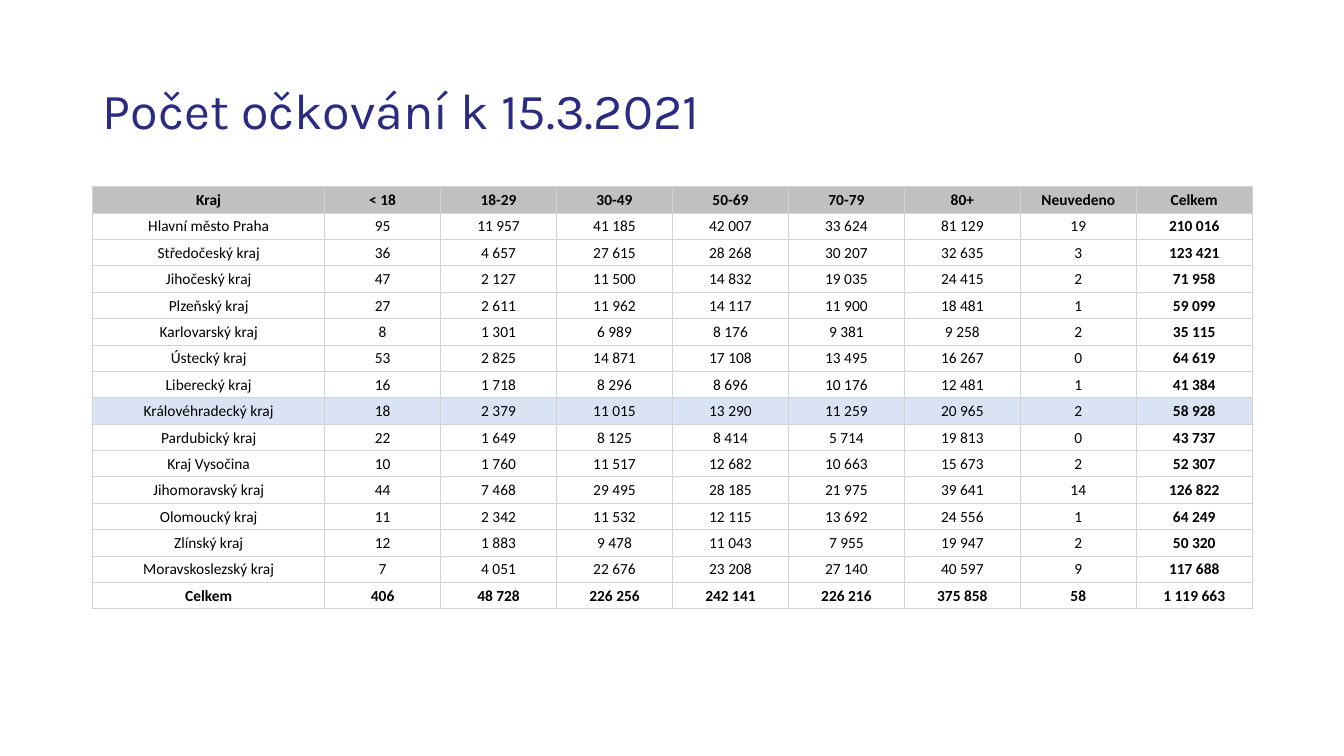
"""Build a slide with a table of vaccinations by region and age group."""
import dataclasses

import pptx
import pptx.dml.color
import pptx.enum.text
import pptx.oxml
import pptx.oxml.ns
import pptx.util

TITLE = "Počet očkování k 15.3.2021"
HEADINGS = ["Kraj", "< 18", "18-29", "30-49", "50-69", "70-79", "80+", "Neuvedeno", "Celkem"]
REGIONS = [
    ("Hlavní město Praha", 95, 11957, 41185, 42007, 33624, 81129, 19, 210016),
    ("Středočeský kraj", 36, 4657, 27615, 28268, 30207, 32635, 3, 123421),
    ("Jihočeský kraj", 47, 2127, 11500, 14832, 19035, 24415, 2, 71958),
    ("Plzeňský kraj", 27, 2611, 11962, 14117, 11900, 18481, 1, 59099),
    ("Karlovarský kraj", 8, 1301, 6989, 8176, 9381, 9258, 2, 35115),
    ("Ústecký kraj", 53, 2825, 14871, 17108, 13495, 16267, 0, 64619),
    ("Liberecký kraj", 16, 1718, 8296, 8696, 10176, 12481, 1, 41384),
    ("Královéhradecký kraj", 18, 2379, 11015, 13290, 11259, 20965, 2, 58928),
    ("Pardubický kraj", 22, 1649, 8125, 8414, 5714, 19813, 0, 43737),
    ("Kraj Vysočina", 10, 1760, 11517, 12682, 10663, 15673, 2, 52307),
    ("Jihomoravský kraj", 44, 7468, 29495, 28185, 21975, 39641, 14, 126822),
    ("Olomoucký kraj", 11, 2342, 11532, 12115, 13692, 24556, 1, 64249),
    ("Zlínský kraj", 12, 1883, 9478, 11043, 7955, 19947, 2, 50320),
    ("Moravskoslezský kraj", 7, 4051, 22676, 23208, 27140, 40597, 9, 117688),
]
TOTALS = ("Celkem", 406, 48728, 226256, 242141, 226216, 375858, 58, 1119663)
HIGHLIGHTED = "Královéhradecký kraj"

PX = 9144
PAGE_SIZE = (1333, 750)
TITLE_BOX = (92, 40, 1150, 145)
TABLE_BOX = (92, 185, 1150, 419)


@dataclasses.dataclass(frozen=True)
class Theme:
    """Colours, fonts and type sizes."""
    title: str = "2B2B82"
    text: str = "000000"
    header: str = "C0C0C0"
    highlight: str = "DAE3F3"
    border: str = "D3D3D3"
    title_font: str = "Karla"
    body_font: str = "Calibri"
    title_size: int = 36
    body_size: int = 11
    border_width: float = 0.5


THEME = Theme()


def px(length):
    """Turn px into EMU."""
    return pptx.util.Emu(round(length * PX))


def style_font(font, name, size, colour, bold=False):
    """Set the look of a run."""
    font.name = name
    font.size = pptx.util.Pt(size)
    font.bold = bold
    font.color.rgb = pptx.dml.color.RGBColor.from_string(colour)


def add_borders(cell):
    """Draw a thin line on every side of a cell."""
    properties = cell._tc.get_or_add_tcPr()
    width = pptx.util.Pt(THEME.border_width)
    for side in ("lnL", "lnR", "lnT", "lnB"):
        properties.append(pptx.oxml.parse_xml(
            f'<a:{side} {pptx.oxml.ns.nsdecls("a")} w="{width}"><a:solidFill>'
            f'<a:srgbClr val="{THEME.border}"/></a:solidFill></a:{side}>'))


def fill_cell(cell, value, bold, colour):
    """Write and format one cell."""
    add_borders(cell)
    if colour:
        cell.fill.solid()
        cell.fill.fore_color.rgb = pptx.dml.color.RGBColor.from_string(colour)
    else:
        cell.fill.background()
    cell.margin_left = cell.margin_right = cell.margin_top = px(1)
    cell.margin_bottom = 0
    cell.vertical_anchor = pptx.enum.text.MSO_ANCHOR.MIDDLE
    para = cell.text_frame.paragraphs[0]
    para.text = f"{value:,}".replace(",", " ") if isinstance(value, int) else value
    para.alignment = pptx.enum.text.PP_ALIGN.CENTER
    style_font(para.runs[0].font, THEME.body_font, THEME.body_size, THEME.text, bold)


def add_title(page):
    """Place and format the title placeholder."""
    box = page.shapes.title
    box.left, box.top, box.width, box.height = map(px, TITLE_BOX)
    box.text_frame.text = TITLE
    box.text_frame.vertical_anchor = pptx.enum.text.MSO_ANCHOR.MIDDLE
    para = box.text_frame.paragraphs[0]
    para.alignment = pptx.enum.text.PP_ALIGN.LEFT
    para.line_spacing = 0.9
    style_font(para.runs[0].font, THEME.title_font, THEME.title_size, THEME.title)


def add_region_table(page):
    """Add the table; the first column is twice as wide as the others."""
    rows = [HEADINGS, *REGIONS, TOTALS]
    table = page.shapes.add_table(len(rows), len(HEADINGS), *map(px, TABLE_BOX)).table
    table.first_row = table.horz_banding = False
    unit = TABLE_BOX[2] / (len(HEADINGS) + 1)
    for index, column in enumerate(table.columns):
        column.width = px(unit * (2 if index == 0 else 1))
    for row in table.rows:
        row.height = px(TABLE_BOX[3] / len(rows))
    fills = {HEADINGS[0]: THEME.header, HIGHLIGHTED: THEME.highlight}
    for row_index, values in enumerate(rows):
        for column_index, value in enumerate(values):
            bold = row_index in (0, len(rows) - 1) or column_index == len(HEADINGS) - 1
            fill_cell(table.cell(row_index, column_index), value, bold, fills.get(values[0]))


def main():
    """Build and save the deck."""
    deck = pptx.Presentation()
    deck.slide_width, deck.slide_height = map(px, PAGE_SIZE)
    page = deck.slides.add_slide(deck.slide_layouts[5])
    add_title(page)
    add_region_table(page)
    deck.save("out.pptx")


if __name__ == "__main__":
    main()
